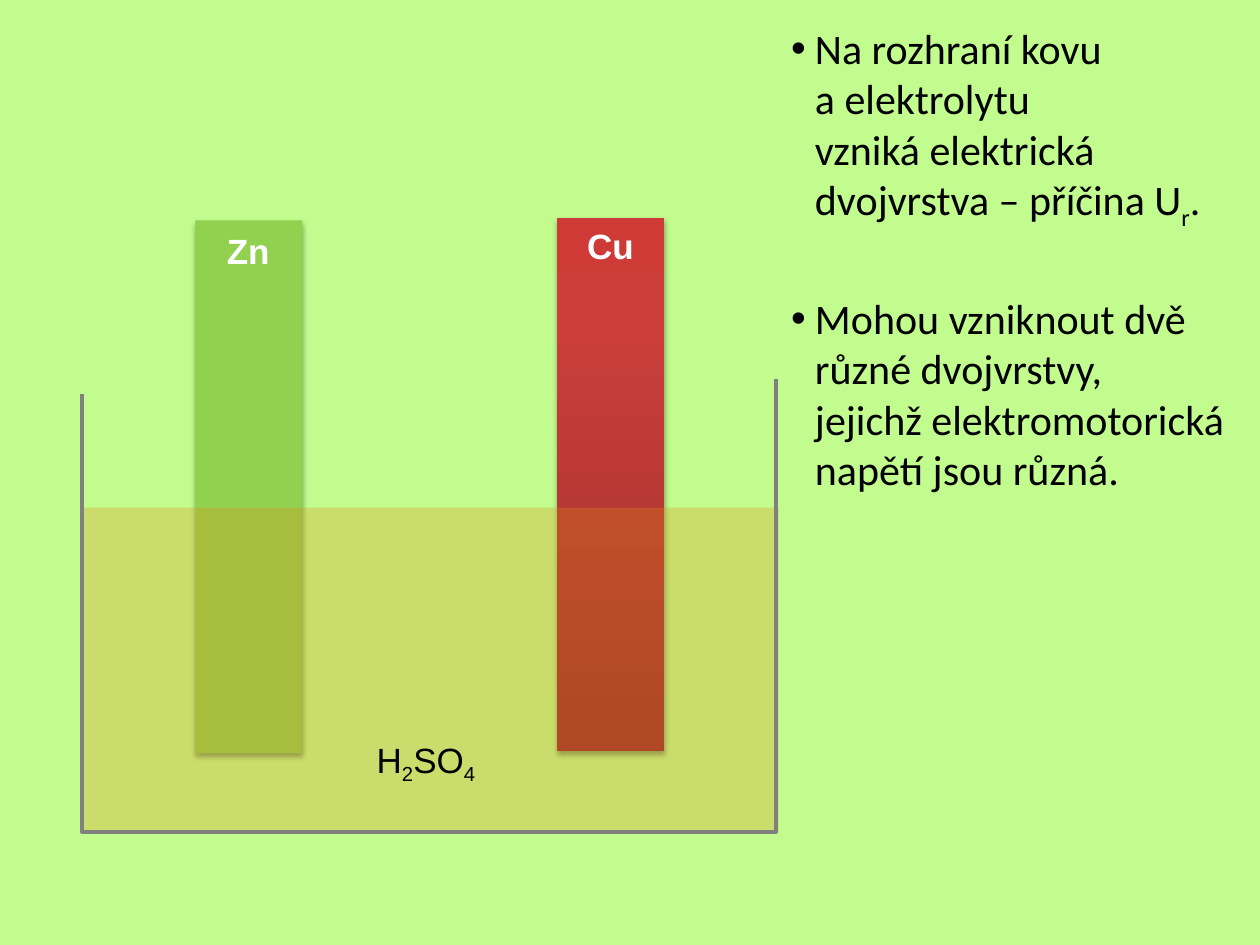
import copy

import pptx
import pptx.dml.color
import pptx.enum.shapes
import pptx.enum.text
import pptx.oxml
import pptx.oxml.ns
import pptx.util

Inches = pptx.util.Inches
Pt = pptx.util.Pt
qn = pptx.oxml.ns.qn

COLORS = {
    "background": "C2FC8E",
    "zinc": "92D050",
    "copper_dark": "9C2F2D",
    "copper": "CB3E3A",
    "copper_light": "CE3B37",
    "acid": "E18D11",
    "vessel": "808080",
    "text": "000000",
    "label": "FFFFFF",
}
COPPER_STOPS = [(0, "copper_dark"), (0.8, "copper"), (1, "copper_light")]
ELECTRODE_SIZE = (0.85, 4.23)
NOTES = [
    [("Na rozhraní kovu\va elektrolytu\vvzniká elektrická dvojvrstva – příčina U", False),
     ("r", True), (".", False)],
    [("Mohou vzniknout dvě různé dvojvrstvy,\vjejichž elektromotorická napětí jsou různá.", False)],
]
FORMULA = [("H", False), ("2", True), ("SO", False), ("4", True)]


def rgb(name):
    return pptx.dml.color.RGBColor.from_string(COLORS[name])


def add_spans(para, spans, font, size, color, bold=False):
    """Add (text, is_subscript) spans; a vertical tab marks a line break."""
    for text, is_subscript in spans:
        for index, line in enumerate(text.split("\v")):
            if index:
                para.add_line_break()
            span = para.add_run()
            span.text = line
            span.font.name = font
            span.font.size = Pt(size)
            span.font.bold = bold
            span.font.color.rgb = rgb(color)
            if is_subscript:
                span.font._element.set("baseline", "-25000")


def add_block(page, left, top, width, height, fill_color=None):
    block = page.shapes.add_shape(
        pptx.enum.shapes.MSO_SHAPE.RECTANGLE,
        Inches(left), Inches(top), Inches(width), Inches(height))
    block.shadow.inherit = False
    block.line.fill.background()
    if fill_color:
        block.fill.solid()
        block.fill.fore_color.rgb = rgb(fill_color)
    return block


def add_soft_shadow(shape):
    effects = shape._element.spPr.find(qn("a:effectLst"))
    effects.append(pptx.oxml.parse_xml(
        '<a:outerShdw xmlns:a="http://schemas.openxmlformats.org/drawingml/2006/main" '
        f'blurRad="{Pt(3.1)}" dist="{Pt(1.8)}" dir="5400000" rotWithShape="0">'
        '<a:srgbClr val="000000"><a:alpha val="35000"/></a:srgbClr></a:outerShdw>'))


def fill_copper(shape):
    shape.fill.gradient()
    shape.fill.gradient_angle = 90
    stop_list = shape._element.spPr.find(".//" + qn("a:gsLst"))
    stop_list.append(copy.deepcopy(stop_list[0]))
    for stop, (position, color) in zip(shape.fill.gradient_stops, COPPER_STOPS):
        stop.position = position
        stop.color.rgb = rgb(color)


def add_electrode(page, left, top, fill_color=None):
    electrode = add_block(page, left, top, *ELECTRODE_SIZE, fill_color)
    add_soft_shadow(electrode)
    return electrode


def add_label(page, left, top, width, height, spans, color, bold=False):
    box = page.shapes.add_textbox(Inches(left), Inches(top), Inches(width), Inches(height))
    box.text_frame.word_wrap = False
    box.text_frame.auto_size = pptx.enum.text.MSO_AUTO_SIZE.SHAPE_TO_FIT_TEXT
    para = box.text_frame.paragraphs[0]
    para.alignment = pptx.enum.text.PP_ALIGN.CENTER
    add_spans(para, spans, "Arial", 20, color, bold)


def add_acid(page):
    acid = add_block(page, 0.66, 4.03, 5.52, 2.56, "acid")
    color = acid._element.spPr.find(qn("a:solidFill"))[0]
    color.append(color.makeelement(qn("a:alpha"), {"val": "27000"}))


def add_vessel(page):
    left, right, bottom = Inches(0.65), Inches(6.16), Inches(6.6)
    builder = page.shapes.build_freeform(left, Inches(3.13))
    builder.add_line_segments(
        [(left, bottom), (right, bottom), (right, Inches(3.01))], close=False)
    vessel = builder.convert_to_shape()
    vessel.shadow.inherit = False
    vessel.fill.background()
    vessel.line.color.rgb = rgb("vessel")
    vessel.line.width = Pt(2.25)


def add_bullets(page):
    box = page.shapes.add_textbox(Inches(6.18), Inches(0.13), Inches(3.74), Inches(7.03))
    frame = box.text_frame
    frame.word_wrap = True
    for index, spans in enumerate(NOTES):
        para = frame.add_paragraph() if index else frame.paragraphs[0]
        if index:
            para.space_before = Pt(35)
        properties = para._element.get_or_add_pPr()
        properties.set("marL", str(Inches(0.19)))
        properties.set("indent", str(Inches(-0.19)))
        for tag, attributes in (("a:buFont", {"typeface": "Arial"}), ("a:buChar", {"char": "•"})):
            properties.append(properties.makeelement(qn(tag), attributes))
        add_spans(para, spans, "Calibri", 24, "text")


def main():
    deck = pptx.Presentation()
    deck.slide_width, deck.slide_height = Inches(10), Inches(7.5)
    page = deck.slides.add_slide(deck.slide_layouts.get_by_name("Blank"))
    page.background.fill.solid()
    page.background.fill.fore_color.rgb = rgb("background")

    add_bullets(page)
    fill_copper(add_electrode(page, 4.42, 1.73))
    add_electrode(page, 1.55, 1.75, "zinc")
    add_label(page, 1.7, 1.77, 0.54, 0.43, [("Zn", False)], "label", bold=True)
    add_label(page, 4.56, 1.73, 0.57, 0.43, [("Cu", False)], "label", bold=True)
    add_acid(page)
    add_vessel(page)
    add_label(page, 2.87, 5.81, 1.02, 0.44, FORMULA, "text")
    deck.save("out.pptx")


if __name__ == "__main__":
    main()
